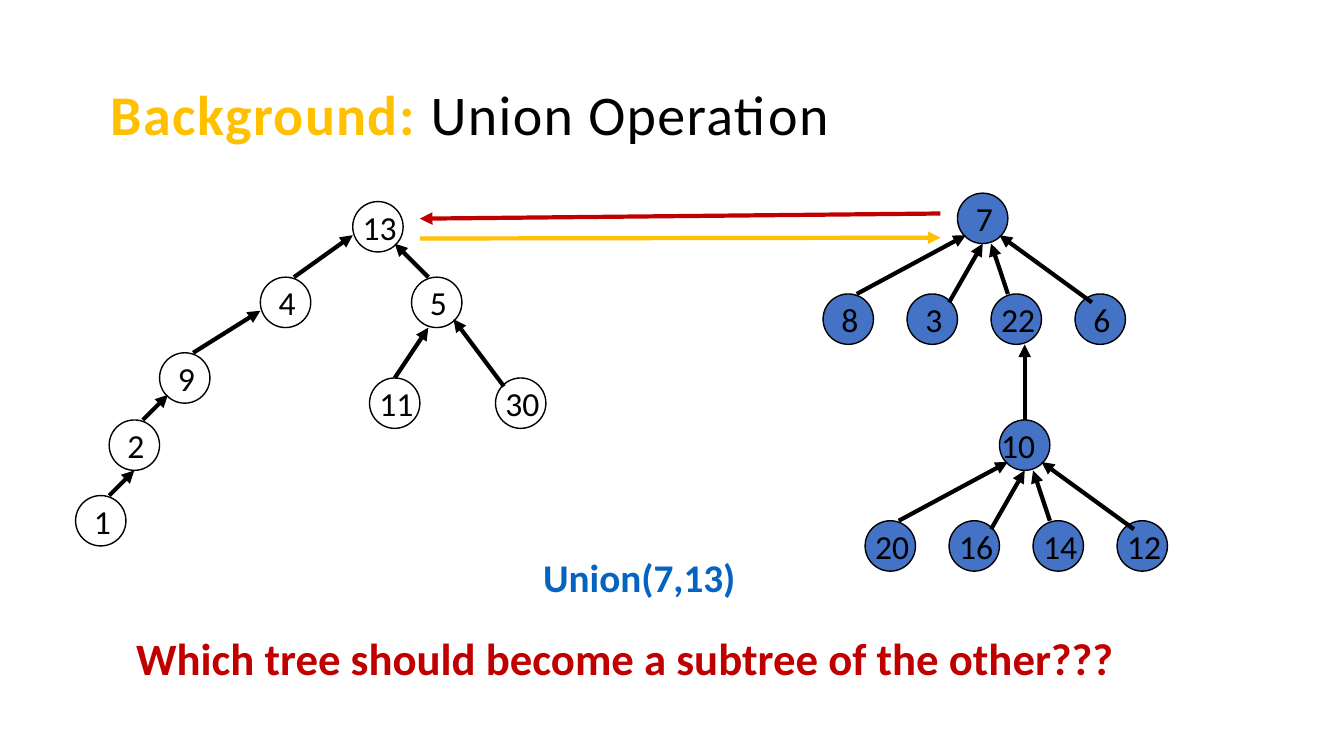
import pptx
import pptx.dml.color
import pptx.enum.shapes
import pptx.enum.text
import pptx.oxml.ns
import pptx.util
from lxml import etree

Cm = pptx.util.Cm
UNIT = Cm(2.54) / 12  # grid step of both trees
NODE_SIZE = 6
BLACK, GOLD, RED, LINK_BLUE, NODE_BLUE = "000000", "FFC000", "C00000", "0563C1", "4472C4"

# Nodes: label, x, y in grid steps from the tree's corner
LEFT_NODES = [("13", 33, 0), ("4", 22, 9), ("5", 40, 9), ("9", 10, 18),
              ("11", 35, 21), ("30", 50, 21), ("2", 4, 26), ("1", 0, 35)]
# Links: parent end x, y, then child end x, y
LEFT_LINKS = [(33, 4, 26, 9), (22, 13, 14, 18), (38, 5, 42, 9), (11, 23, 8, 26),
              (42, 15, 38, 21), (45, 14, 51, 22), (7, 32, 4, 35)]
FAN_LINKS = [(1, 5, -12, 12), (3, 6, -1, 13), (4, 6, 6, 12), (5, 5, 16, 13)]


def rgb(hex_colour):
    return pptx.dml.color.RGBColor.from_string(hex_colour)


def grid(steps):
    return round(steps * UNIT)


def add_run(paragraph, text, size, colour, bold=False):
    run = paragraph.add_run()
    run.text = text
    run.font.name = "Calibri"
    run.font.size = pptx.util.Pt(size)
    run.font.bold = bold
    run.font.color.rgb = rgb(colour)
    return run


def add_text(slide, box, text, size, colour, bold=False):
    frame = slide.shapes.add_textbox(*box).text_frame
    frame.word_wrap = True
    frame.auto_size = pptx.enum.text.MSO_AUTO_SIZE.SHAPE_TO_FIT_TEXT
    add_run(frame.paragraphs[0], text, size, colour, bold)


def add_arrow(slide, tip_x, tip_y, tail_x, tail_y, colour=BLACK):
    """Draw a line whose arrowhead sits at its first end."""
    arrow = slide.shapes.add_connector(
        pptx.enum.shapes.MSO_CONNECTOR.STRAIGHT, tip_x, tip_y, tail_x, tail_y)
    arrow.line.color.rgb = rgb(colour)
    arrow.line.width = pptx.util.Pt(3)
    head = etree.SubElement(arrow.line._get_or_add_ln(), pptx.oxml.ns.qn("a:headEnd"))
    head.set("type", "triangle")
    etree.SubElement(arrow._element.spPr, pptx.oxml.ns.qn("a:effectLst"))


def add_node(slide, label, left, top, fill):
    node = slide.shapes.add_shape(pptx.enum.shapes.MSO_SHAPE.OVAL, grid(left), grid(top),
                                  grid(NODE_SIZE), grid(NODE_SIZE))
    node.shadow.inherit = False
    if fill:
        node.fill.solid()
        node.fill.fore_color.rgb = rgb(fill)
    else:
        node.fill.background()
    node.line.color.rgb = rgb(BLACK)
    node.line.width = pptx.util.Pt(1)
    # Short labels sit one step in; "10" leans one step out
    shift = 1 if len(label) == 1 else -1 if label == "10" else 0
    width = 4 if len(label) == 1 else 9
    label_box = (grid(left + shift), grid(top), grid(width), grid(NODE_SIZE))
    add_text(slide, label_box, label, 24, BLACK)


def add_tree(slide, left, top, nodes, links, fill=None):
    """Draw a tree whose corner is at left, top, in grid steps."""
    for label, x, y in nodes:
        add_node(slide, label, left + x, top + y, fill)
    for tip_x, tip_y, tail_x, tail_y in links:
        add_arrow(slide, grid(left + tip_x), grid(top + tip_y),
                  grid(left + tail_x), grid(top + tail_y))


def add_fan(slide, left, top, root, children):
    """Draw a root at left, top with four evenly spaced children below it."""
    nodes = [(root, 0, 0)]
    nodes += [(child, -16 + 10 * i, 12) for i, child in enumerate(children)]
    add_tree(slide, left, top, nodes, FAN_LINKS, NODE_BLUE)


def add_right_tree(slide, left, top):
    add_fan(slide, left + 16, top, "7", ["8", "3", "22", "6"])
    add_fan(slide, left + 21, top + 27, "10", ["20", "16", "14", "12"])
    add_tree(slide, left, top, [], [(24, 18, 24, 27)])


def add_title(slide, left, top, width, height):
    title = slide.shapes.title
    title.left, title.top, title.width, title.height = left, top, width, height
    frame = title.text_frame
    frame.word_wrap = True
    frame.auto_size = pptx.enum.text.MSO_AUTO_SIZE.NONE
    frame.vertical_anchor = pptx.enum.text.MSO_ANCHOR.BOTTOM
    heading = frame.paragraphs[0]
    heading.alignment = pptx.enum.text.PP_ALIGN.LEFT
    heading.line_spacing = 0.8
    for run in (add_run(heading, "Background: ", 40, GOLD, True),
                add_run(heading, "Union Operation", 40, BLACK)):
        run.font._element.set("spc", "100")


def add_union_arrows(slide, left, top, width):
    right = left + width
    add_arrow(slide, left, top + Cm(0.13), right, top, RED)
    add_arrow(slide, right, top + Cm(0.61), left, top + Cm(0.63), GOLD)


def add_question(slide, left, top):
    add_text(slide, (left, top, Cm(29.85), Cm(1.63)),
             "Which tree should become a subtree of the other???", 32, RED, True)
    add_text(slide, (left + Cm(10.26), top - Cm(1.96), Cm(5.51), Cm(1.45)),
             "Union(7,13)", 28, LINK_BLUE, True)


def main():
    deck = pptx.Presentation()
    deck.slide_width, deck.slide_height = Cm(33.87), Cm(19.05)
    slide = deck.slides.add_slide(deck.slide_layouts[5])
    add_title(slide, Cm(2.54), Cm(1.27), Cm(24.16), Cm(2.54))
    add_tree(slide, 9, 24, LEFT_NODES, LEFT_LINKS)
    add_right_tree(slide, 98, 23)
    add_question(slide, Cm(3.18), Cm(15.77))
    add_union_arrows(slide, Cm(10.58), Cm(5.38), Cm(13.12))
    deck.save("out.pptx")


if __name__ == "__main__":
    main()
